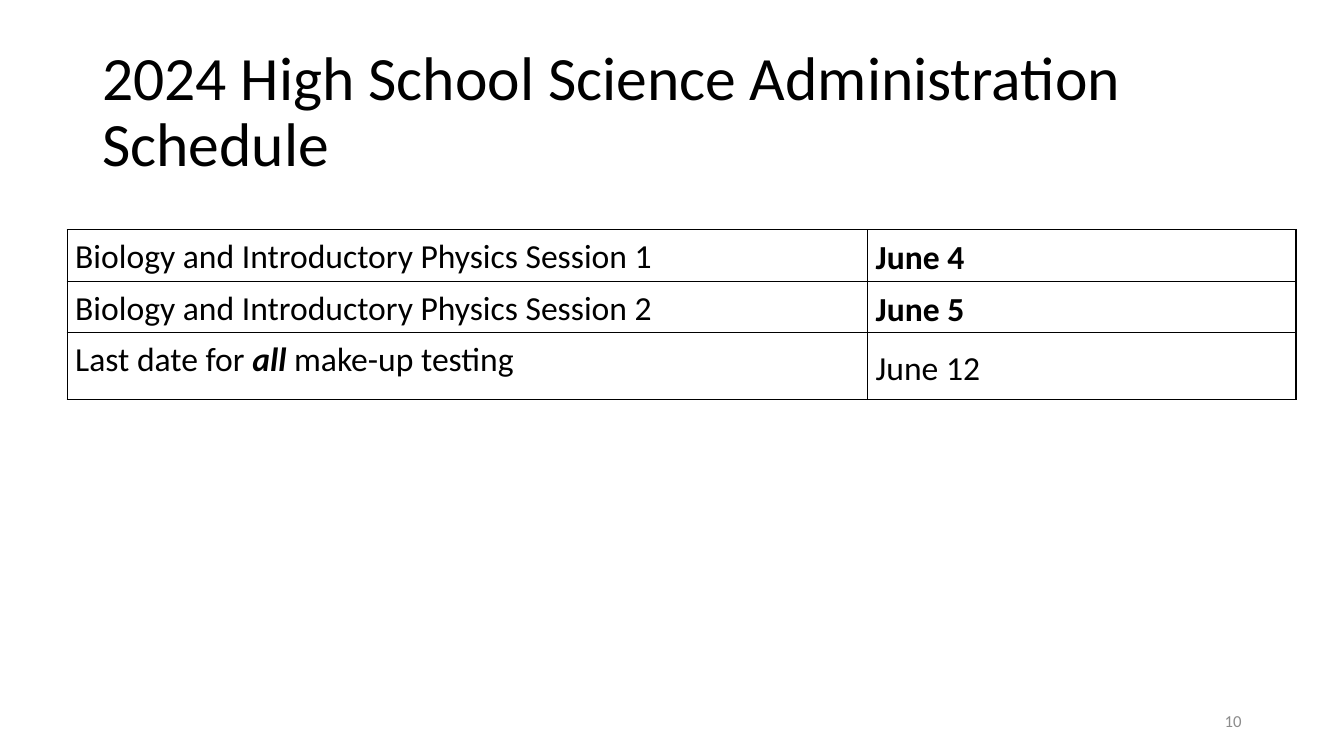
from dataclasses import dataclass

from lxml import etree
from pptx import Presentation
from pptx import util as u
from pptx.dml.color import RGBColor
from pptx.enum import text
from pptx.oxml import ns

COLS, ROWS = 160, 90  # grid units per slide, each 1/12 inch


@dataclass(frozen=True)
class Theme:
    font: str = "Calibri"
    ink: str = "000000"
    gray: str = "8C8C8C"
    paper: str = "FFFFFF"
    head: int = 44
    body: int = 24
    note: int = 12
    rule: float = 1


class Deck:
    def __init__(self, theme):
        self.theme = theme
        self.file = Presentation()
        self.file.slide_width = u.Inches(COLS / 12)
        self.file.slide_height = u.Inches(ROWS / 12)
        self.slide = self.file.slides.add_slide(self.file.slide_layouts[6])

    def grid(self, *units):
        return [u.Inches(n / 12) for n in units]

    def fill_para(self, para, runs, size, color):
        """Add runs given as (words, style), where style may hold b and i."""
        for words, style in runs:
            run = para.add_run()
            run.text = words
            font = run.font
            font.name, font.size = self.theme.font, u.Pt(size)
            font.bold, font.italic = "b" in style, "i" in style
            font.color.rgb = RGBColor.from_string(color)

    def label(self, box, words, size, color, align=text.PP_ALIGN.LEFT, space=1.0):
        frame = self.slide.shapes.add_textbox(*self.grid(*box)).text_frame
        frame.word_wrap = True
        frame.vertical_anchor = text.MSO_ANCHOR.MIDDLE
        para = frame.paragraphs[0]
        para.alignment, para.line_spacing = align, space
        self.fill_para(para, [(words, "")], size, color)

    def border(self, cell):
        props = cell._tc.get_or_add_tcPr()
        for index, side in enumerate(("lnL", "lnR", "lnT", "lnB")):
            line = etree.Element(ns.qn(f"a:{side}"), w=str(u.Pt(self.theme.rule)))
            fill = etree.SubElement(line, ns.qn("a:solidFill"))
            etree.SubElement(fill, ns.qn("a:srgbClr"), val=self.theme.ink)
            props.insert(index, line)

    def cell(self, cell, runs, anchor, right):
        cell.fill.solid()
        cell.fill.fore_color.rgb = RGBColor.from_string(self.theme.paper)
        self.border(cell)
        cell.vertical_anchor = anchor
        cell.margin_left, cell.margin_right = u.Inches(0.08), u.Inches(right)
        cell.margin_top = cell.margin_bottom = u.Inches(0.01)
        para = cell.text_frame.paragraphs[0]
        para.line_spacing = 1.15
        self.fill_para(para, runs, self.theme.body, self.theme.ink)

    def table(self, left, top, widths, heights, rows):
        box = self.grid(left, top, sum(widths), sum(heights))
        table = self.slide.shapes.add_table(len(heights), len(widths), *box).table
        table.first_row = table.horz_banding = False
        for col, width in zip(table.columns, self.grid(*widths)):
            col.width = width
        for row, height in zip(table.rows, self.grid(*heights)):
            row.height = height
        for y, (event, date) in enumerate(rows):
            self.cell(table.cell(y, 0), event, text.MSO_ANCHOR.TOP, 0.08)
            self.cell(table.cell(y, 1), date, text.MSO_ANCHOR.MIDDLE, 0.07)


def main():
    theme = Theme()
    deck = Deck(theme)
    deck.label((11, 4.8, 138, 17.4), "2024 High School Science Administration Schedule",
               theme.head, theme.ink, space=0.9)
    deck.label((113, 83.4, 36, 4.8), "10", theme.note, theme.gray,
               align=text.PP_ALIGN.RIGHT)
    dates = [
        ([("Biology and Introductory Physics Session 1", "")], [("June 4", "b")]),
        ([("Biology and Introductory Physics Session 2", "")], [("June 5", "b")]),
        ([("Last date for ", ""), ("all ", "bi"), ("make-up testing", "")],
         [("June 12", "")]),
    ]
    deck.table(8, 27.36, (95.3, 51), (6.12, 6.12, 7.92), dates)
    deck.file.save("out.pptx")


if __name__ == "__main__":
    main()
